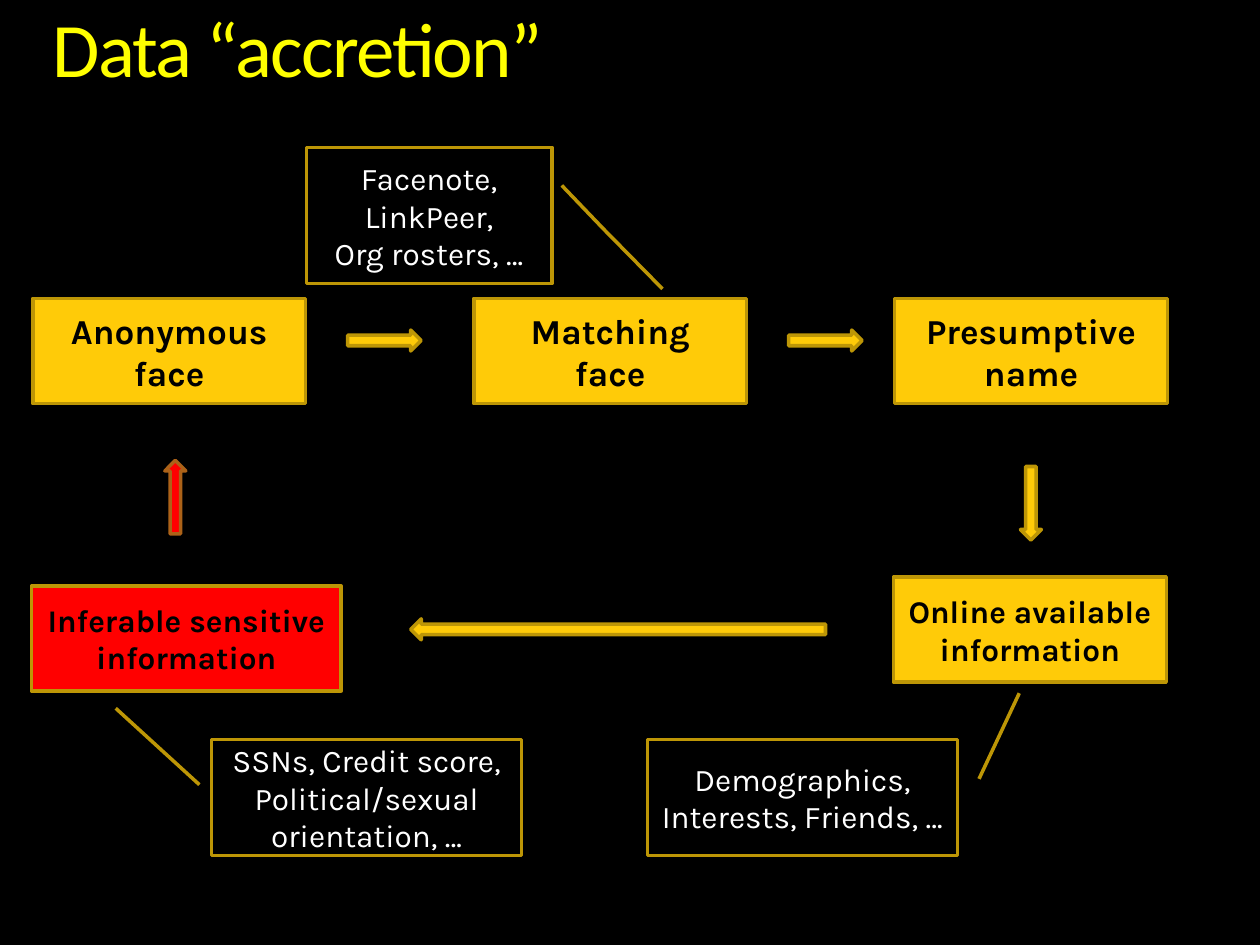
from dataclasses import dataclass

from pptx import Presentation
from pptx.dml.color import RGBColor
from pptx.enum.shapes import MSO_SHAPE
from pptx.enum.text import MSO_ANCHOR, PP_ALIGN
from pptx.util import Pt

RECT = MSO_SHAPE.RECTANGLE
ARROW = MSO_SHAPE.RIGHT_ARROW
CALL = MSO_SHAPE.LINE_CALLOUT_1
BENT = MSO_SHAPE.LINE_CALLOUT_2
TOP, MIDDLE = MSO_ANCHOR.TOP, MSO_ANCHOR.MIDDLE
LEFT, CENTER = PP_ALIGN.LEFT, PP_ALIGN.CENTER


@dataclass(frozen=True)
class Theme:
    back: str = "000000"
    title: str = "FFFF00"
    gold: str = "FFCB08"
    edge: str = "BD9606"
    red: str = "FF0000"
    rust: str = "AC6218"
    dark: str = "000000"
    light: str = "FFFFFF"
    head: str = "Calibri"
    body: str = "Karla"
    huge: int = 44
    large: int = 20
    small: int = 18
    stroke: int = 2


THEME = Theme()


def paint(fill, color):
    fill.solid()
    fill.fore_color.rgb = RGBColor.from_string(color)


def write(shape, text, size=THEME.small, color=THEME.light, font=THEME.body,
          bold=False, align=CENTER, anchor=MIDDLE, pitch=None, track=None):
    frame = shape.text_frame
    frame.word_wrap = True
    frame.vertical_anchor = anchor
    frame.text = text
    for para in frame.paragraphs:
        para.alignment = align
        para.line_spacing = pitch
        for run in para.runs:
            run.font.name = font
            run.font.size = Pt(size)
            run.font.bold = bold
            run.font.color.rgb = RGBColor.from_string(color)
            if track is not None:
                run.font._element.set("spc", str(track))


def place(slide, kind, box, fill=None, edge=THEME.edge):
    shape = slide.shapes.add_shape(kind, *map(Pt, box))
    shape.shadow.inherit = False
    if fill:
        paint(shape.fill, fill)
    else:
        shape.fill.background()
    paint(shape.line.fill, edge)
    shape.line.width = Pt(THEME.stroke)
    return shape


def add_title(slide, box, text):
    title = slide.shapes.title
    title.left, title.top, title.width, title.height = map(Pt, box)
    frame = title.text_frame
    frame.margin_left = frame.margin_right = 0
    frame.margin_top = frame.margin_bottom = 0
    write(title, text, size=THEME.huge, color=THEME.title, font=THEME.head,
          align=LEFT, anchor=TOP, pitch=0.9, track=-100)


def add_flow(slide, box):
    left, top, width, height = box
    wide, high, thin = 156, 60, 12
    last = width - wide
    steps = [
        ("Anonymous face", 0.7, 0, wide, THEME.large, THEME.gold),
        ("Matching\nface", 252.7, 0, wide, THEME.large, THEME.gold),
        ("Presumptive name", last, 0, wide, THEME.large, THEME.gold),
        ("Online available information", last - 0.7, height - high - 5, wide,
         THEME.small, THEME.gold),
        ("Inferable sensitive information", 0, height - high, 177,
         THEME.small, THEME.red),
    ]
    for text, x, y, w, size, fill in steps:
        step = place(slide, RECT, (left + x, top + y, w, high), fill)
        write(step, text, size=size, color=THEME.dark, bold=True)

    arrows = [
        (180.7, 18, 42, 0, THEME.gold, THEME.edge),
        (432.7, 18, 42, 0, THEME.gold, THEME.edge),
        (550.1, 111, 42, 90, THEME.gold, THEME.edge),
        (216.7, 183, 237, 180, THEME.gold, THEME.edge),
        (61.2, 107.5, 42, 270, THEME.red, THEME.rust),
    ]
    for x, y, w, turn, fill, edge in arrows:
        arrow = place(slide, ARROW, (left + x, top + y, w, thin), fill, edge)
        arrow.rotation = turn


def add_note(slide, box, text, kind, bends):
    note = place(slide, kind, box)
    for i, bend in enumerate(bends):
        note.adjustments[i] = bend
    write(note, text)


def main():
    deck = Presentation()
    deck.slide_width, deck.slide_height = Pt(720), Pt(540)
    slide = deck.slides.add_slide(deck.slide_layouts[5])
    paint(slide.background.fill, THEME.back)
    add_title(slide, (30, 6, 654, 48), "Data “accretion”")
    add_flow(slide, (18, 170.6, 649.2, 224.2))
    add_note(slide, (175, 84.2, 140.4, 77.8),
             "Facenote, LinkPeer,\nOrg rosters, …",
             BENT, (0.28, 1.04, 0.6, 1.21, 1.04, 1.45))
    add_note(slide, (370.1, 422.6, 177, 66.2),
             "Demographics, Interests, Friends, …",
             CALL, (0.34, 1.07, -0.4, 1.2))
    add_note(slide, (121, 422.6, 177, 66.2),
             "SSNs, Credit score, Political/sexual orientation, …",
             CALL, (0.39, -0.04, -0.27, -0.31))
    deck.save("out.pptx")


if __name__ == "__main__":
    main()
